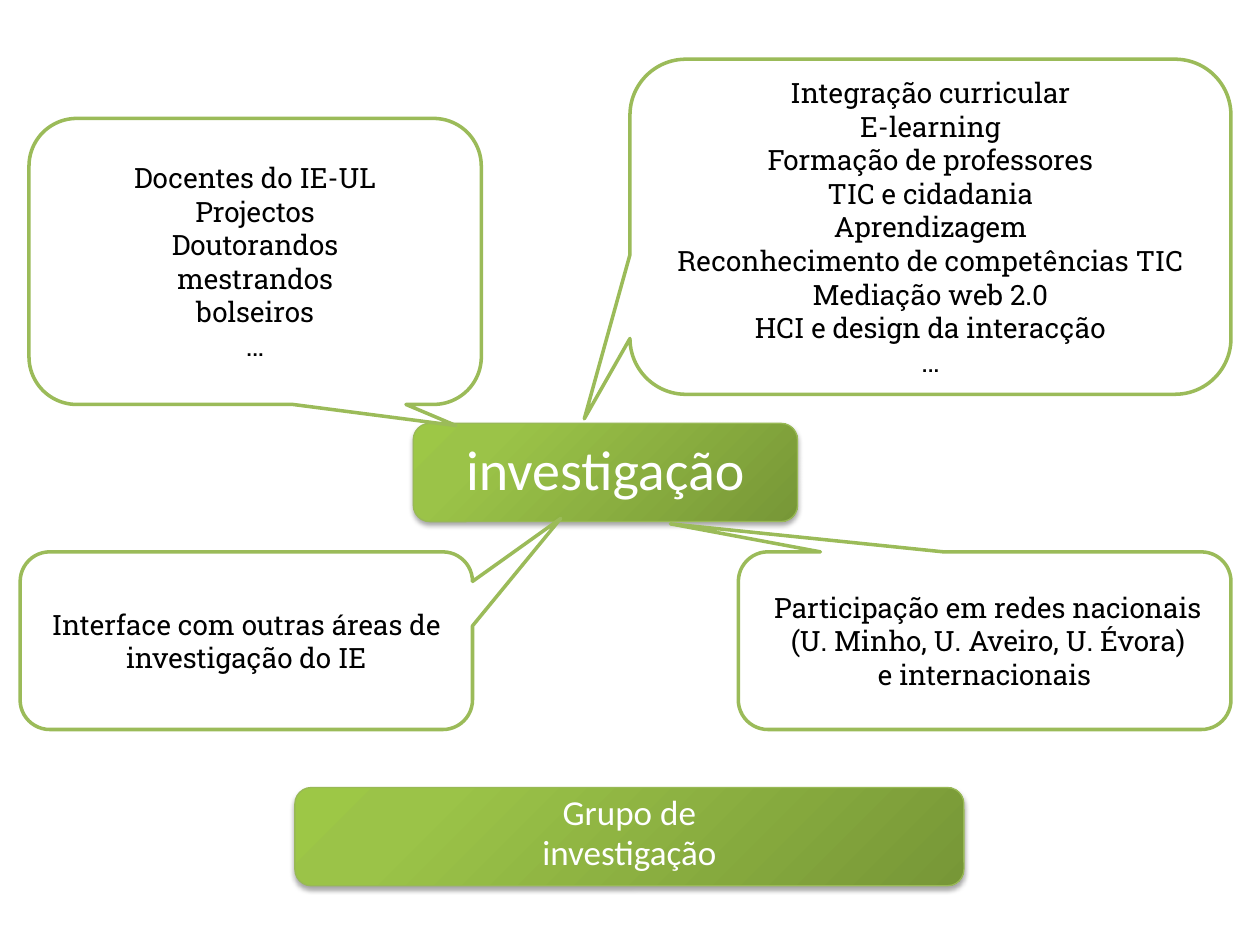
from lxml import etree
from pptx import Presentation
from pptx.dml.color import RGBColor
from pptx.enum.shapes import MSO_SHAPE
from pptx.enum.text import MSO_ANCHOR, PP_ALIGN
from pptx.oxml import parse_xml
from pptx.oxml.ns import nsdecls, qn
from pptx.util import Inches, Pt

ROUNDED = MSO_SHAPE.ROUNDED_RECTANGLE
CALLOUT = MSO_SHAPE.ROUNDED_RECTANGULAR_CALLOUT
CENTER = PP_ALIGN.CENTER
TOP, MIDDLE = MSO_ANCHOR.TOP, MSO_ANCHOR.MIDDLE

COLORS = {
    "callout_line": "9BBB59",
    "banner_line": "98B955",
    "white": "FFFFFF",
    "black": "000000",
}
GRADIENT_STOPS = [(0, "779737"), (80, "9BC348"), (100, "9DC746")]

CALLOUTS = [
    ((5, 0.47, 4.77, 2.66), (-0.576, 0.573), [
        "Integração curricular", "E-learning", "Formação de professores",
        "TIC e cidadania", "Aprendizagem",
        "Reconhecimento de competências TIC", "Mediação web 2.0",
        "HCI e design da interacção", "…"]),
    ((0.23, 0.94, 3.59, 2.27), (0.444, 0.574), [
        "Docentes do IE-UL", "Projectos", "Doutorandos", "mestrandos",
        "bolseiros", "…"]),
    ((0.16, 4.38, 3.59, 1.41), (0.695, -0.688), [
        "Interface com outras áreas de investigação do IE"]),
    ((5.86, 4.38, 3.91, 1.41), (-0.638, -0.658), [
        " Participação em redes nacionais\v (U. Minho, U. Aveiro, U. Évora)",
        "e internacionais"]),
]


def add_box(slide, kind, box, line_color, line_width):
    """Add an outlined shape without a theme shadow."""
    shape = slide.shapes.add_shape(kind, *(Inches(length) for length in box))
    shape.shadow.inherit = False
    shape.line.color.rgb = RGBColor.from_string(COLORS[line_color])
    shape.line.width = Pt(line_width)
    return shape


def write_lines(shape, lines, font, size, color, anchor):
    """Fill a shape with centred paragraphs in one font."""
    frame = shape.text_frame
    frame.word_wrap = True
    frame.vertical_anchor = anchor
    frame.text = "\n".join(lines)
    for paragraph in frame.paragraphs:
        paragraph.alignment = CENTER
        for run in paragraph.runs:
            run.font.name = font
            run.font.size = Pt(size)
            run.font.color.rgb = RGBColor.from_string(COLORS[color])


def apply_gradient(shape):
    """Fill a shape with a green gradient radiating from its lower right corner."""
    stops = "".join(
        f'<a:gs pos="{position * 1000}"><a:srgbClr val="{color}"/></a:gs>'
        for position, color in GRADIENT_STOPS)
    shape.fill.background()
    properties = shape.fill._xPr
    properties.replace(properties.find(qn("a:noFill")), parse_xml(
        f'<a:gradFill {nsdecls("a")} rotWithShape="1"><a:gsLst>{stops}</a:gsLst>'
        '<a:path path="circle"><a:fillToRect l="100000" t="100000"/></a:path>'
        '</a:gradFill>'))


def apply_shadow(shape):
    """Give a shape a soft shadow straight below it."""
    effects = shape._element.spPr.find(qn("a:effectLst"))
    shadow = etree.SubElement(
        effects, qn("a:outerShdw"), blurRad=str(Pt(3.1)), dist=str(Pt(1.8)),
        dir="5400000", rotWithShape="0")
    color = etree.SubElement(shadow, qn("a:srgbClr"), val=COLORS["black"])
    etree.SubElement(color, qn("a:alpha"), val="35000")


def add_banner(slide, box, lines, size, line_spacing):
    """Add a green gradient banner with white text."""
    shape = add_box(slide, ROUNDED, box, "banner_line", 0.75)
    apply_gradient(shape)
    apply_shadow(shape)
    write_lines(shape, lines, "Calibri", size, "white", TOP)
    for paragraph in shape.text_frame.paragraphs:
        paragraph.space_before = Pt(size * 0.2)
        paragraph.line_spacing = line_spacing


def add_callout(slide, box, tail, lines):
    """Add a white speech bubble whose tail points at the central banner."""
    shape = add_box(slide, CALLOUT, box, "callout_line", 2)
    shape.fill.solid()
    shape.fill.fore_color.rgb = RGBColor.from_string(COLORS["white"])
    shape.adjustments[0], shape.adjustments[1] = tail
    write_lines(shape, lines, "Roboto Slab", 16, "black", MIDDLE)


def main():
    """Build the research group slide."""
    presentation = Presentation()
    presentation.slide_width = Inches(10)
    presentation.slide_height = Inches(7.5)
    slide = presentation.slides.add_slide(presentation.slide_layouts[6])
    add_banner(slide, (3.28, 3.36, 3.05, 0.78), ["investigação"], 32, 1.0)
    for box, tail, lines in CALLOUTS:
        add_callout(slide, box, tail, lines)
    add_banner(slide, (2.34, 6.25, 5.31, 0.78), ["Grupo de", "investigação"], 20, 0.8)
    presentation.save("out.pptx")


if __name__ == "__main__":
    main()
